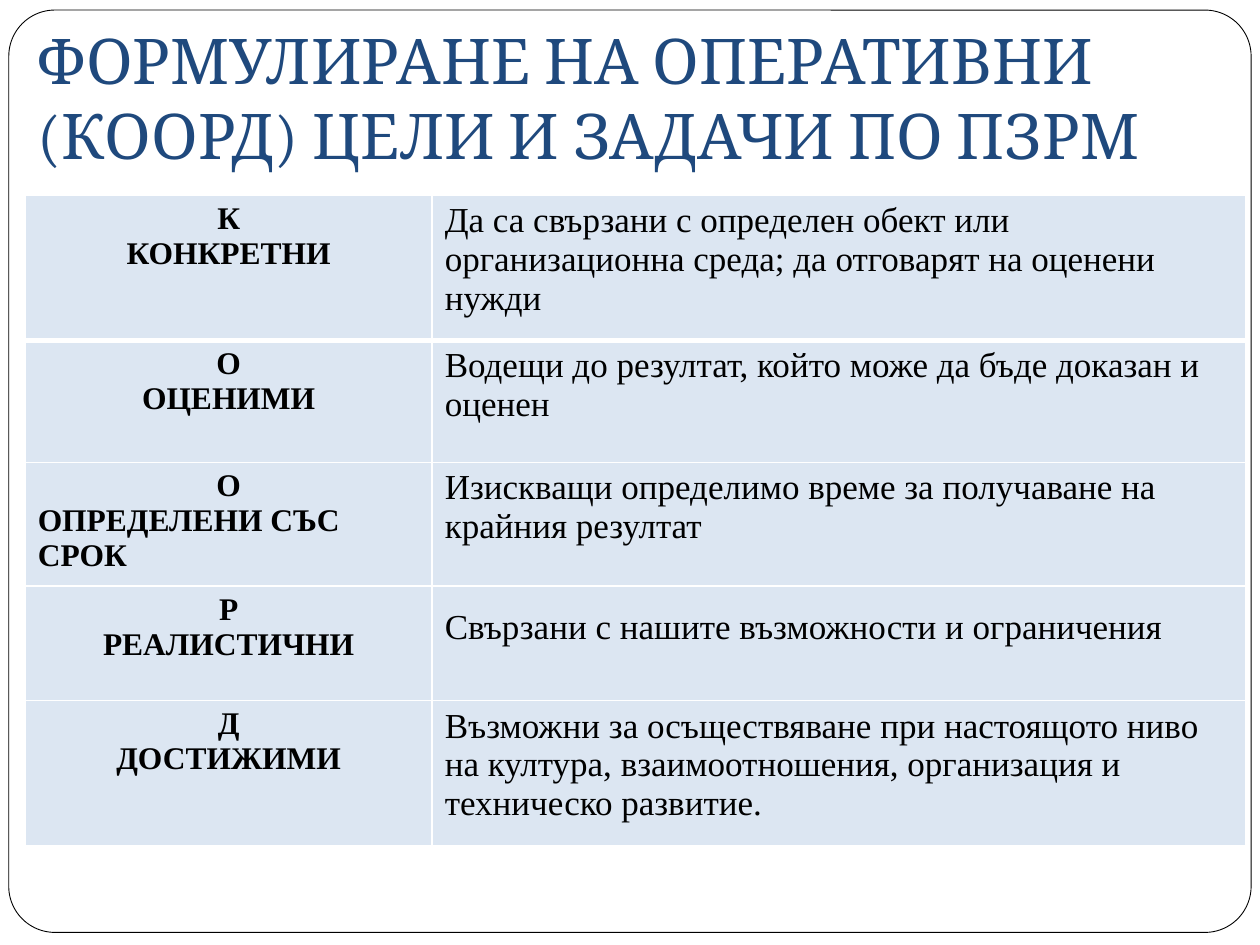
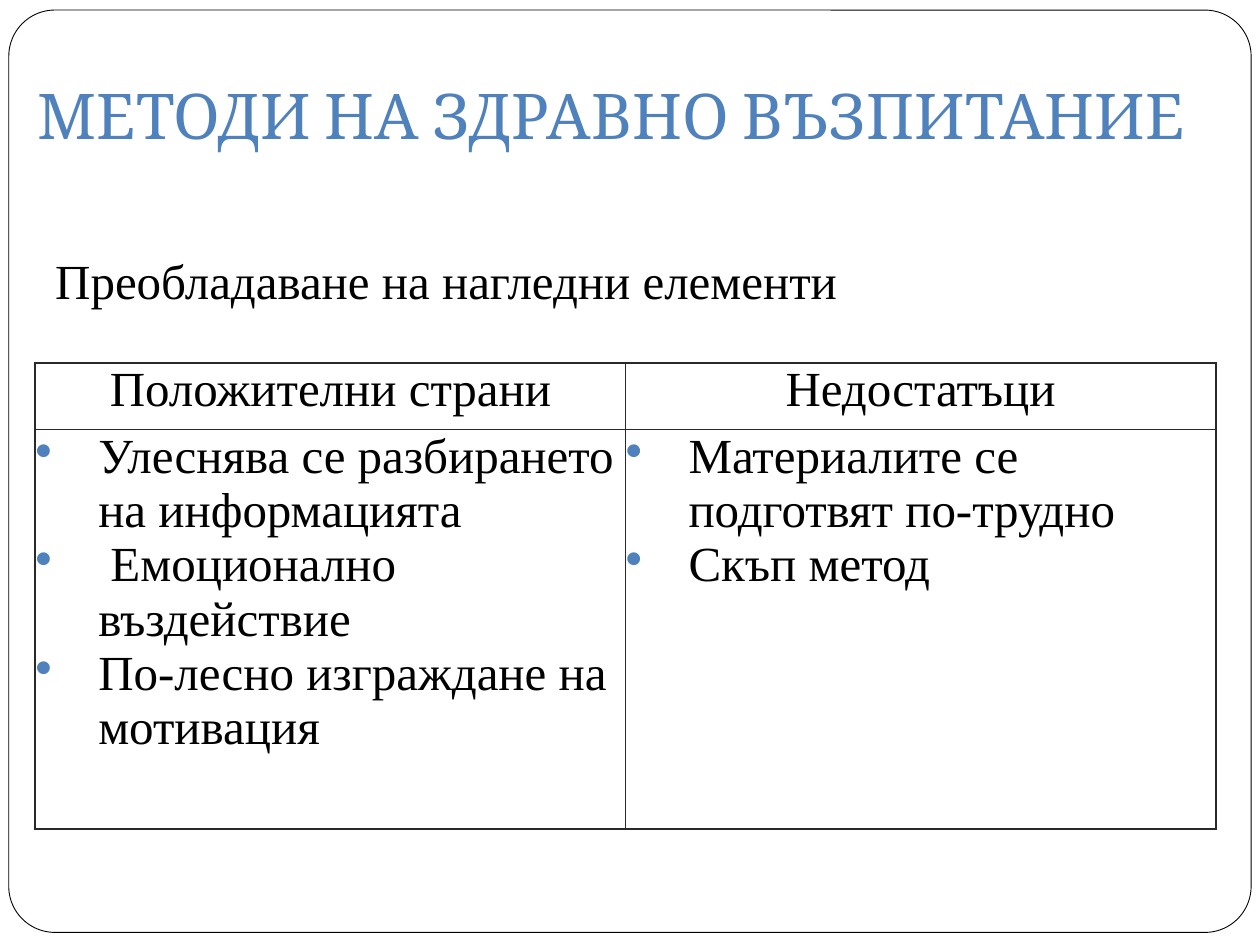
"""Build two slides on health education: goal criteria and visual methods."""
from dataclasses import dataclass

from lxml import etree
from pptx import Presentation
from pptx import util as u
from pptx.dml.color import RGBColor
from pptx.enum import shapes, text
from pptx.oxml.ns import qn

NAVY = RGBColor(0x1F, 0x49, 0x7D)
BLUE = RGBColor(0x4F, 0x81, 0xBD)
PALE = RGBColor(0xDC, 0xE6, 0xF2)
WHITE = RGBColor(0xFF, 0xFF, 0xFF)
BLACK = RGBColor(0x00, 0x00, 0x00)
CHARCOAL = RGBColor(0x29, 0x29, 0x29)
HEADING_FONT, BODY_FONT = "Cambria", "Times New Roman"
WIDTH, HEIGHT = u.Inches(10), u.Inches(7.5)
COLUMNS, ROWS = 100, 75
LEFT, CENTER = text.PP_ALIGN.LEFT, text.PP_ALIGN.CENTER


@dataclass(frozen=True)
class Area:
    """A rectangle in grid columns and rows."""

    column: float
    row: float
    columns: float
    rows: float

    def emu(self) -> tuple[int, int, int, int]:
        """Return left, top, width and height in EMU."""
        return across(self.column), down(self.row), across(self.columns), down(self.rows)


@dataclass(frozen=True)
class Ruling:
    """Colour of a table's rules and their widths in points."""

    color: RGBColor
    outer: float
    inner: float
    under_header: float


@dataclass(frozen=True)
class Criterion:
    """One letter of the goal acronym with its word and meaning."""

    letter: str
    word: str
    meaning: str
    word_align: text.PP_ALIGN = CENTER
    drop: float = 0.05


CRITERIA = (
    Criterion("К", "КОНКРЕТНИ", "Да са свързани с определен обект или организационна среда; "
              "да отговарят на оценени нужди"),
    Criterion("О", "ОЦЕНИМИ", "Водещи до резултат, който може да бъде доказан и оценен"),
    Criterion("О", "ОПРЕДЕЛЕНИ СЪС СРОК",
              "Изискващи определимо време за получаване на крайния резултат", word_align=LEFT),
    Criterion("Р", "РЕАЛИСТИЧНИ", "Свързани с нашите възможности и ограничения", drop=0.18),
    Criterion("Д", "ДОСТИЖИМИ", "Възможни за осъществяване при настоящото ниво на култура, "
              "взаимоотношения, организация и техническо развитие."),
)
VISUAL_METHODS = {
    "Положителни страни": ("Улеснява се разбирането на информацията",
                           " Емоционално въздействие",
                           "По-лесно изграждане на мотивация"),
    "Недостатъци": ("Материалите се подготвят по-трудно", "Скъп метод"),
}


def across(columns: float) -> int:
    """Convert grid columns to EMU."""
    return round(WIDTH * columns / COLUMNS)


def down(rows: float) -> int:
    """Convert grid rows to EMU."""
    return round(HEIGHT * rows / ROWS)


def add_bullet(paragraph, color: RGBColor) -> None:
    """Give a paragraph a hanging coloured bullet."""
    properties = paragraph._p.get_or_add_pPr()
    properties.set("marL", str(across(5)))
    properties.set("indent", str(-across(5)))
    tint = etree.SubElement(properties, qn("a:buClr"))
    etree.SubElement(tint, qn("a:srgbClr"), val=str(color))
    etree.SubElement(properties, qn("a:buChar"), char="•")


def write(frame, *lines: str, size: float, font: str = BODY_FONT, color: RGBColor = BLACK,
          bold: bool = False, align: text.PP_ALIGN = LEFT, bullet: RGBColor | None = None) -> None:
    """Write each line as a formatted paragraph."""
    frame.word_wrap = True
    for index, line in enumerate(lines):
        paragraph = frame.add_paragraph() if index else frame.paragraphs[0]
        paragraph.alignment = align
        run = paragraph.add_run()
        run.text = line
        run.font.size, run.font.name, run.font.bold = u.Pt(size), font, bold
        run.font.color.rgb = color
        if bullet is not None:
            add_bullet(paragraph, bullet)


def set_margins(target, left: float, top: float, right: float, bottom: float) -> None:
    """Set the inner margins of a text frame or cell in inches."""
    target.margin_left, target.margin_top = u.Inches(left), u.Inches(top)
    target.margin_right, target.margin_bottom = u.Inches(right), u.Inches(bottom)


def add_titled_slide(deck, layout, title: str, area: Area, color: RGBColor):
    """Add a slide with its title moved and styled."""
    slide = deck.slides.add_slide(layout)
    heading = slide.shapes.title
    heading.left, heading.top, heading.width, heading.height = area.emu()
    frame = heading.text_frame
    frame.auto_size = text.MSO_AUTO_SIZE.NONE
    frame.vertical_anchor = text.MSO_ANCHOR.BOTTOM
    set_margins(frame, 0.1, 0.05, 0.1, 0.1)
    write(frame, title, size=36, font=HEADING_FONT, color=color)
    return slide


def add_page_border(slide, layout) -> None:
    """Draw the rounded page border and hand it to the shared layout."""
    border = slide.shapes.add_shape(shapes.MSO_SHAPE.ROUNDED_RECTANGLE,
                                    *Area(0.7, 0.8, 98.6, 73.2).emu())
    border.adjustments[0] = 0.05
    border.shadow.inherit = False
    border.fill.solid()
    border.fill.fore_color.rgb = WHITE
    border.line.color.rgb = BLACK
    border.line.width = u.Pt(0.5)
    layout.shapes._spTree.insert(2, border._element)


def rule_cell(cell, color: RGBColor, widths: dict[str, float]) -> None:
    """Draw the borders of a cell, keyed by side letter in schema order."""
    properties = cell._tc.get_or_add_tcPr()
    for index, (side, width) in enumerate(widths.items()):
        line = etree.Element(qn(f"a:ln{side}"), w=str(u.Pt(width)))
        fill = etree.SubElement(line, qn("a:solidFill"))
        etree.SubElement(fill, qn("a:srgbClr"), val=str(color))
        properties.insert(index, line)


def add_grid(slide, area: Area, columns: list[float], rows: list[float],
             fill: RGBColor, ruling: Ruling):
    """Add an empty table with given track sizes, fill and rules."""
    table = slide.shapes.add_table(len(rows), len(columns), *area.emu()).table
    table.first_row = table.horz_banding = False
    for track, size in zip(table.columns, columns):
        track.width = across(size)
    for track, size in zip(table.rows, rows):
        track.height = down(size)
    across_rules = [ruling.outer, ruling.under_header,
                    *[ruling.inner] * (len(rows) - 2), ruling.outer]
    down_rules = [ruling.outer, *[ruling.inner] * (len(columns) - 1), ruling.outer]
    for r in range(len(rows)):
        for c in range(len(columns)):
            cell = table.cell(r, c)
            cell.fill.solid()
            cell.fill.fore_color.rgb = fill
            rule_cell(cell, ruling.color, {"L": down_rules[c], "R": down_rules[c + 1],
                                           "T": across_rules[r], "B": across_rules[r + 1]})
    return table


def fill_criteria(slide) -> None:
    """Add the table of goal criteria."""
    rows = [11.5, 9.7, 9.8, 9.1, 11.5]
    table = add_grid(slide, Area(2, 15.5, 96.9, sum(rows)), [32.3, 64.6], rows,
                     PALE, Ruling(WHITE, 1, 1, 3))
    for row, criterion in enumerate(CRITERIA):
        name, meaning = table.cell(row, 0), table.cell(row, 1)
        write(name.text_frame, criterion.letter, criterion.word,
              size=18, bold=True, align=CENTER)
        name.text_frame.paragraphs[1].alignment = criterion.word_align
        meaning.margin_top = u.Inches(criterion.drop)
        write(meaning.text_frame, criterion.meaning, size=20)


def fill_methods(slide) -> None:
    """Add the table of strengths and weaknesses with its caption."""
    rows = [5.3, 31.7]
    table = add_grid(slide, Area(2.8, 28.8, 93.7, sum(rows)), [46.85] * 2, rows,
                     WHITE, Ruling(CHARCOAL, 1.5, 0.75, 0.75))
    for column, (heading, points) in enumerate(VISUAL_METHODS.items()):
        header, body = table.cell(0, column), table.cell(1, column)
        for cell in (header, body):
            set_margins(cell, 0, 0, 0, 0)
        write(header.text_frame, heading, size=28, align=CENTER)
        write(body.text_frame, *points, size=28, bullet=BLUE)
    caption = slide.shapes.add_textbox(*Area(3.4, 19.4, 76.4, 5.7).emu())
    write(caption.text_frame, "Преобладаване на нагледни елементи", size=28)


def main() -> None:
    """Build and save the deck."""
    deck = Presentation()
    deck.slide_width, deck.slide_height = WIDTH, HEIGHT
    layout = deck.slide_layouts.get_by_name("Title Only")
    goals = add_titled_slide(deck, layout,
                             "ФОРМУЛИРАНЕ НА ОПЕРАТИВНИ (КООРД) ЦЕЛИ И ЗАДАЧИ ПО ПЗРМ",
                             Area(2, 2.9, 95.3, 11.8), NAVY)
    add_page_border(goals, layout)
    fill_criteria(goals)
    methods = add_titled_slide(deck, layout, "МЕТОДИ НА ЗДРАВНО ВЪЗПИТАНИЕ",
                               Area(2, 3, 98, 10.1), BLUE)
    fill_methods(methods)
    deck.save("out.pptx")


if __name__ == "__main__":
    main()
